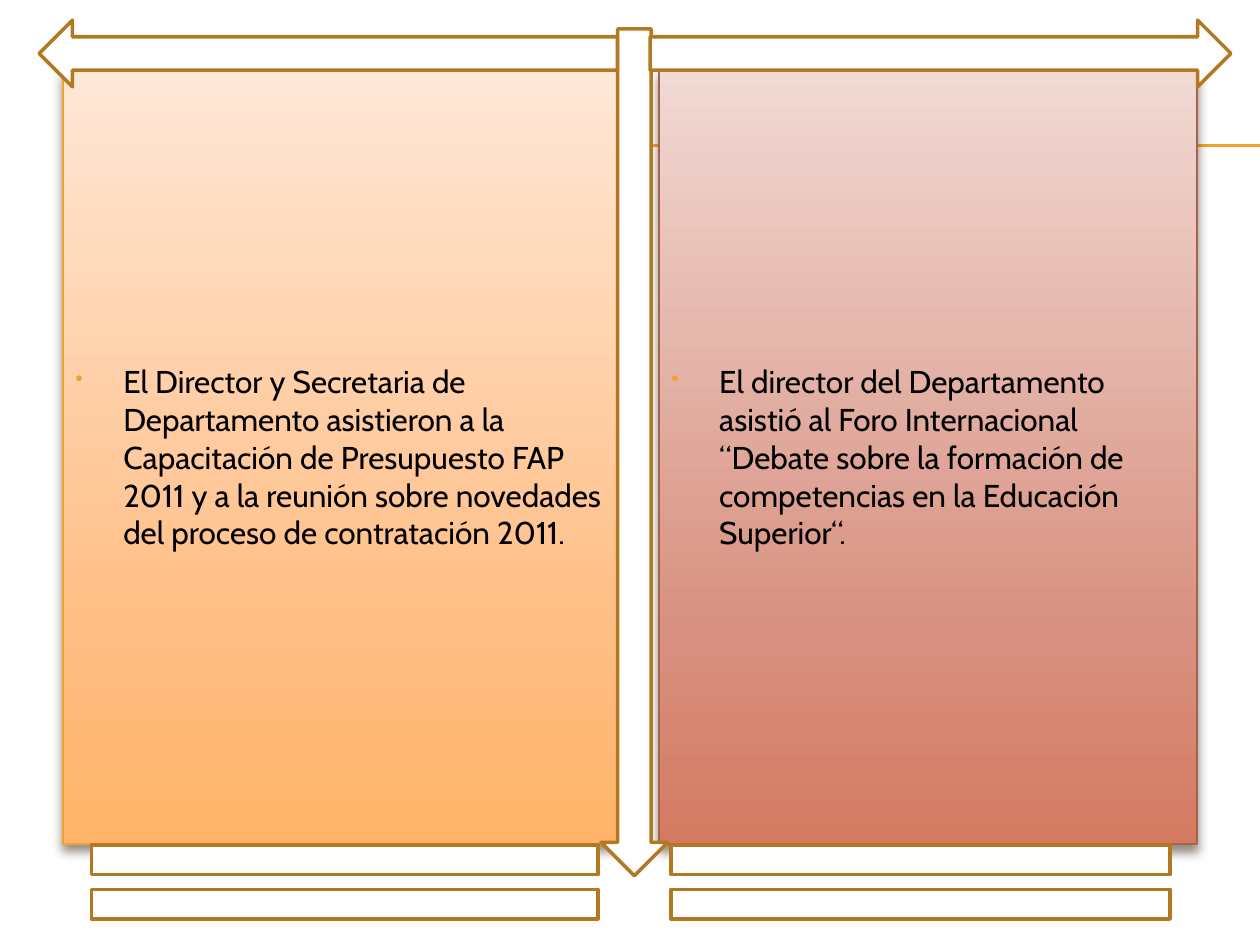
from copy import deepcopy

from pptx import Presentation
from pptx.dml.color import RGBColor
from pptx.enum.shapes import MSO_CONNECTOR as CONNECTOR, MSO_SHAPE as SHAPE
from pptx.enum.text import MSO_ANCHOR as ANCHOR, PP_ALIGN as ALIGN
from pptx.oxml import parse_xml
from pptx.oxml.ns import nsdecls, qn
from pptx.util import Inches, Pt

ORANGE = "F0A22E"
BROWN = "B27822"
PANELS = [
    (0.5, 4.42, ORANGE, [(0, "FFE7D7"), (0.72, "FFBE84"), (1, "FFB468")],
     "El Director y Secretaria de Departamento asistieron a la Capacitación de "
     "Presupuesto FAP 2011 y a la reunión sobre novedades del proceso de "
     "contratación 2011."),
    (5.23, 4.27, "A5644E", [(0, "F1D9D4"), (0.72, "D89180"), (1, "D47A62")],
     "El director del Departamento asistió al Foro Internacional “Debate sobre "
     "la formación de competencias en la Educación Superior“."),
]
FRAME_SHAPES = [
    (SHAPE.DOWN_ARROW, (4.77, 0.23, 0.53, 6.72)),
    (SHAPE.RIGHT_ARROW, (5.16, 0.16, 4.61, 0.53)),
    (SHAPE.LEFT_ARROW, (0.31, 0.16, 4.59, 0.53)),
    (SHAPE.MATH_EQUAL, (0, 6.5, 5.47, 1)),
    (SHAPE.MATH_EQUAL, (4.61, 6.5, 5.39, 1)),
]


def color(value):
    return RGBColor.from_string(value)


def set_attributes(target, values):
    for name, value in values.items():
        setattr(target, name, value)


def add_rule(slide, top):
    rule = slide.shapes.add_connector(
        CONNECTOR.STRAIGHT, Inches(0.56), Inches(top), Inches(10), Inches(top))
    rule.line.color.rgb = color(ORANGE)
    rule.line.width = Pt(0.75)
    rule._element.spPr.append(parse_xml(f"<a:effectLst {nsdecls('a')}/>"))


def add_outlined_shape(slide, kind, box, line_color, line_width):
    shape = slide.shapes.add_shape(kind, *map(Inches, box))
    shape.shadow.inherit = False
    shape.fill.solid()
    shape.fill.fore_color.rgb = color("FFFFFF")
    shape.line.color.rgb = color(line_color)
    shape.line.width = Pt(line_width)
    return shape


def fill_gradient(shape, stops):
    """Fill from top to bottom with three stops."""
    shape.fill.gradient()
    shape.fill.gradient_angle = 270
    stop_list = shape._element.spPr.find(qn("a:gradFill")).find(qn("a:gsLst"))
    stop_list.append(deepcopy(stop_list[0]))
    for stop, (position, value) in zip(shape.fill.gradient_stops, stops):
        stop.position = position
        stop.color.rgb = color(value)


def add_shadow(shape):
    shape._element.spPr.find(qn("a:effectLst")).append(parse_xml(
        f'<a:outerShdw {nsdecls("a")} blurRad="{Pt(6)}" dist="{Pt(4)}" '
        'dir="5400000" rotWithShape="0"><a:srgbClr val="4E3B30">'
        '<a:alpha val="60000"/></a:srgbClr></a:outerShdw>'))


def add_bullet(paragraph):
    properties = paragraph._p.get_or_add_pPr()
    properties.set("marL", str(Inches(0.38)))
    properties.set("indent", str(Inches(-0.38)))
    for xml in (f'<a:buClr {nsdecls("a")}><a:srgbClr val="{ORANGE}"/></a:buClr>',
                f'<a:buSzPct {nsdecls("a")} val="70000"/>',
                f'<a:buChar {nsdecls("a")} char="•"/>'):
        properties.append(parse_xml(xml))


def add_panel(slide, left, width, line_color, stops, text):
    box = (left, 0.55, width, 6.15)
    shape = add_outlined_shape(slide, SHAPE.RECTANGLE, box, line_color, 0.79)
    fill_gradient(shape, stops)
    add_shadow(shape)
    set_attributes(shape.text_frame,
                   {"word_wrap": True, "vertical_anchor": ANCHOR.MIDDLE})
    paragraph = shape.text_frame.paragraphs[0]
    paragraph.alignment = ALIGN.LEFT
    paragraph.space_before = Pt(3.6)
    add_bullet(paragraph)
    run = paragraph.add_run()
    run.text = text
    set_attributes(run.font, {"name": "Cabin", "size": Pt(18)})
    run.font.color.rgb = color("000000")


def main():
    presentation = Presentation()
    set_attributes(presentation,
                   {"slide_width": Inches(10), "slide_height": Inches(7.5)})
    slide = presentation.slides.add_slide(presentation.slide_layouts[6])
    for top in (1.15, 1.16):
        add_rule(slide, top)
    for panel in PANELS:
        add_panel(slide, *panel)
    for kind, box in FRAME_SHAPES:
        add_outlined_shape(slide, kind, box, BROWN, 2)
    presentation.save("out.pptx")


if __name__ == "__main__":
    main()
